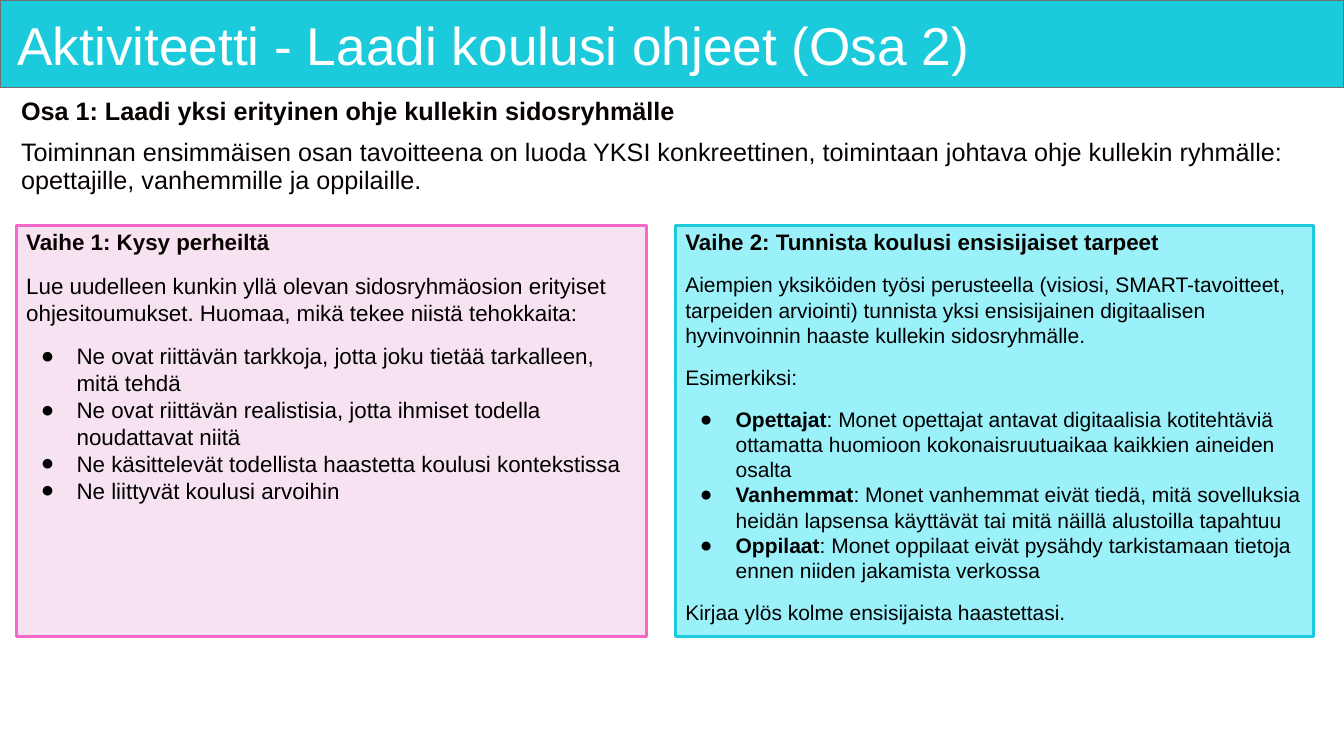
"""Build the slide on drafting school guidelines, part 2."""
from lxml.etree import SubElement
from pptx import Presentation
from pptx.dml.color import RGBColor
from pptx.enum.shapes import MSO_SHAPE
from pptx.enum.text import MSO_ANCHOR, MSO_AUTO_SIZE, PP_ALIGN
from pptx.oxml.ns import qn
from pptx.util import Cm, Pt

HUES = {
    "teal": "1BCBDC", "aqua": "9BF1F9", "pink": "F766CA", "rose": "F6E2F0",
    "gray": "6C6E70", "ink": "080301", "black": "000000", "white": "FFFFFF",
}


def paint(shape, fill, edge, width):
    shape.fill.solid()
    shape.fill.fore_color.rgb = RGBColor.from_string(HUES[fill])
    shape.line.color.rgb = RGBColor.from_string(HUES[edge])
    shape.line.width = Pt(width)


def write(para, text, size, hue, bold=False):
    run = para.add_run()
    run.text = text
    font = run.font
    font.name, font.size, font.bold = "Arial", Pt(size), bold
    font.color.rgb = RGBColor.from_string(HUES[hue])


deck = Presentation()
deck.slide_width, deck.slide_height = Cm(33.87), Cm(19.05)
slide = deck.slides.add_slide(deck.slide_layouts[4])
holders = {item.placeholder_format.idx: item for item in slide.placeholders}
spare = holders[3].element
spare.getparent().remove(spare)

band = slide.shapes.add_shape(MSO_SHAPE.RECTANGLE, 0, 0, deck.slide_width, Cm(2.21))
band.shadow.inherit = False
paint(band, "teal", "gray", 1)
slide.shapes.element.insert(2, band.element)

title = slide.shapes.title
title.left, title.top, title.width, title.height = Cm(0.28), Cm(0.23), Cm(33.17), Cm(1.98)
frame = title.text_frame
frame.auto_size, frame.word_wrap = MSO_AUTO_SIZE.NONE, True
frame.vertical_anchor = MSO_ANCHOR.MIDDLE
frame.margin_left = frame.margin_right = frame.margin_top = frame.margin_bottom = Cm(0.16)
para = frame.paragraphs[0]
para.alignment, para.line_spacing = PP_ALIGN.LEFT, 0.9
write(para, "Aktiviteetti - Laadi koulusi ohjeet (Osa 2)", 38, "white")

intro = [
    ("head", 0, 0, "Osa 1: Laadi yksi erityinen ohje kullekin sidosryhmälle"),
    ("lead", 10, 0, "Toiminnan ensimmäisen osan tavoitteena on luoda YKSI konkreettinen, "
     "toimintaan johtava ohje kullekin ryhmälle: opettajille, vanhemmille ja oppilaille."),
]
step_one = [
    ("head", 0, 0, "Vaihe 1: Kysy perheiltä"),
    ("text", 12, 0, "Lue uudelleen kunkin yllä olevan sidosryhmäosion erityiset "
     "ohjesitoumukset. Huomaa, mikä tekee niistä tehokkaita:"),
    ("item", 12, 0, "Ne ovat riittävän tarkkoja, jotta joku tietää tarkalleen, mitä tehdä"),
    ("item", 0, 0, "Ne ovat riittävän realistisia, jotta ihmiset todella noudattavat niitä"),
    ("item", 0, 0, "Ne käsittelevät todellista haastetta koulusi kontekstissa"),
    ("item", 0, 12, "Ne liittyvät koulusi arvoihin"),
]
step_two = [
    ("head", 0, 0, "Vaihe 2: Tunnista koulusi ensisijaiset tarpeet"),
    ("text", 12, 0, "Aiempien yksiköiden työsi perusteella (visiosi, SMART-tavoitteet, "
     "tarpeiden arviointi) tunnista yksi ensisijainen digitaalisen hyvinvoinnin haaste "
     "kullekin sidosryhmälle."),
    ("text", 12, 0, "Esimerkiksi:"),
    ("item", 12, 0, "Opettajat|: Monet opettajat antavat digitaalisia kotitehtäviä "
     "ottamatta huomioon kokonaisruutuaikaa kaikkien aineiden osalta"),
    ("item", 0, 0, "Vanhemmat|: Monet vanhemmat eivät tiedä, mitä sovelluksia heidän "
     "lapsensa käyttävät tai mitä näillä alustoilla tapahtuu"),
    ("item", 0, 0, "Oppilaat|: Monet oppilaat eivät pysähdy tarkistamaan tietoja ennen "
     "niiden jakamista verkossa"),
    ("text", 12, 12, "Kirjaa ylös kolme ensisijaista haastettasi."),
]

boxes = [
    (1, (0.28, 2.36, 33.17, 1.52), None, 18, 18, intro),
    (2, (0.41, 5.69, 15.88, 10.36), ("rose", "pink"), 16, 16, step_one),
    (4, (17.02, 5.69, 16.08, 10.36), ("aqua", "teal"), 16, 15, step_two),
]
for key, place, hues, large, small, lines in boxes:
    box = holders[key]
    box.left, box.top, box.width, box.height = map(Cm, place)
    if hues:
        paint(box, *hues, 2.25)
    frame = box.text_frame
    frame.auto_size, frame.word_wrap = MSO_AUTO_SIZE.NONE, True
    frame.vertical_anchor = MSO_ANCHOR.TOP
    frame.margin_left = frame.margin_right = Cm(0.25)
    frame.margin_top = frame.margin_bottom = Cm(0.13)
    for spot, (kind, before, after, text) in enumerate(lines):
        para = frame.add_paragraph() if spot else frame.paragraphs[0]
        props = para._p.get_or_add_pPr()
        if kind == "item":
            props.set("marL", str(Cm(1.27)))
            props.set("indent", str(Cm(-0.9)))
            tint = SubElement(props, qn("a:buClr"))
            SubElement(tint, qn("a:srgbClr")).set("val", HUES["black"])
            SubElement(props, qn("a:buFont")).set("typeface", "Arial")
            SubElement(props, qn("a:buChar")).set("char", "●")
        else:
            props.set("marL", "0")
            props.set("indent", "0")
            SubElement(props, qn("a:buNone"))
        para.alignment = PP_ALIGN.LEFT
        para.line_spacing = 0.9 if kind in ("head", "lead") else 1.0
        para.space_before, para.space_after = Pt(before), Pt(after)
        if kind == "head":
            write(para, text, large, "ink", True)
        else:
            hue = "ink" if kind == "lead" else "black"
            name, mark, rest = text.partition("|")
            write(para, name, small, hue, bool(mark))
            if rest:
                write(para, rest, small, hue)

deck.save("out.pptx")
